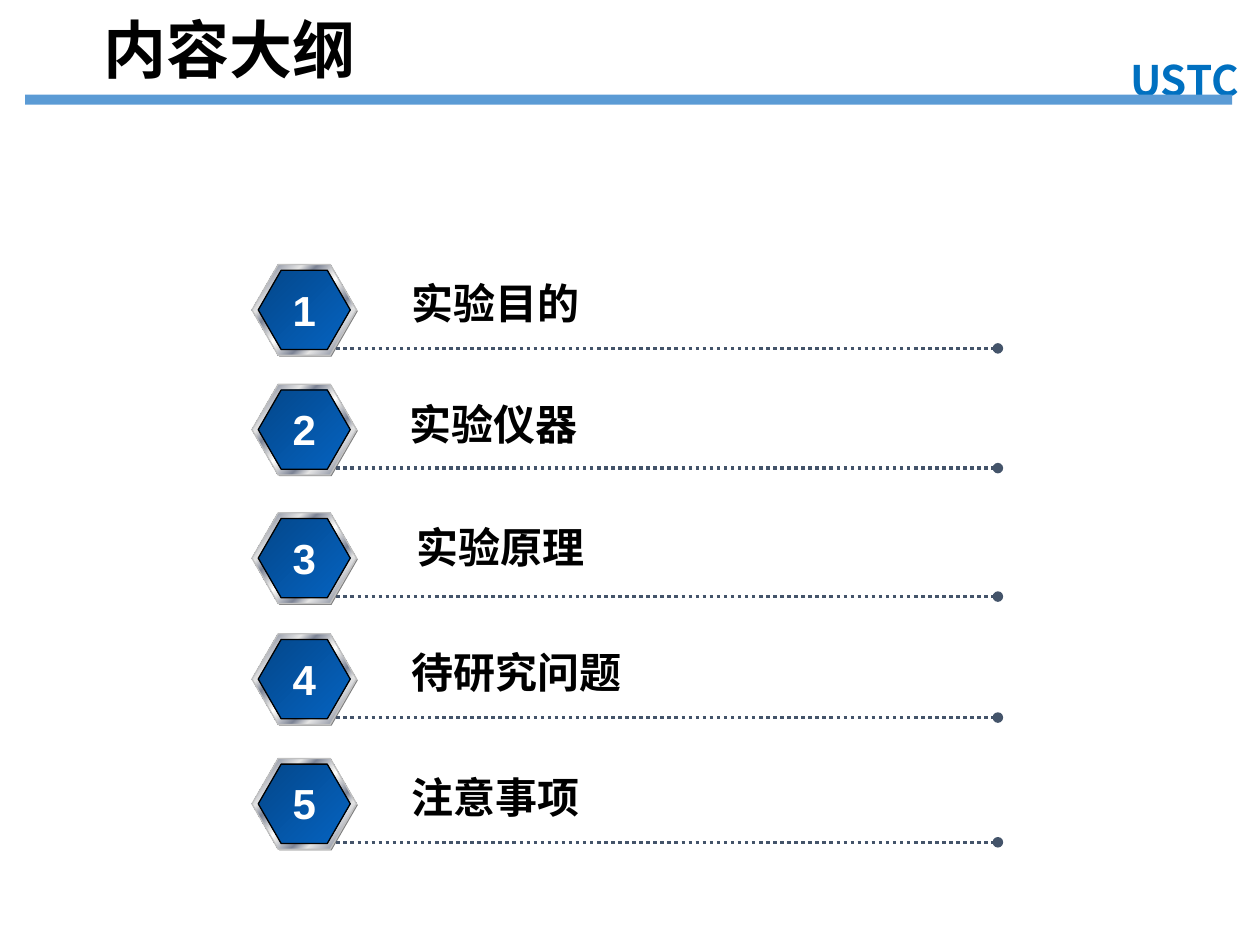
from lxml import etree
from pptx import Presentation
from pptx import util as u
from pptx.dml.color import RGBColor
from pptx.enum import dml, shapes, text
from pptx.oxml.ns import qn

COLORS = {
    "black": "000000", "white": "FFFFFF", "brand": "0070C0", "bar": "5B9BD5",
    "rule": "44546A", "shadow": "808080", "rim": "C0C0C0",
    "steel": "7D8496", "silver": "E6E6E6", "navy": "04478A", "blue": "0563C1",
}
METAL = [(0, "silver"), (8, "steel"), (26, "silver"), (34, "steel"), (46, "silver"),
         (50, "white"), (54, "silver"), (66, "steel"), (74, "silver"),
         (92, "steel"), (100, "silver")]
DEEP_BLUE = [(0, "navy"), (100, "blue")]
CJK, LATIN = "Noto Sans CJK SC", "Arial"
COLUMNS = 100

# Badge top, label text, label column, label row, label width, label font
AGENDA = [
    (21.0, "实验目的", 31.7, 21.5, 16.5, LATIN),
    (30.5, "实验仪器", 31.5, 31.1, 15.6, CJK),
    (40.7, "实验原理", 32.1, 40.9, 15.6, CJK),
    (50.3, "待研究问题", 31.7, 50.8, 18.9, LATIN),
    (60.2, "注意事项", 31.7, 60.7, 15.6, LATIN),
]


def rgb(name):
    return RGBColor.from_string(COLORS[name])


class AgendaSlide:
    """Draws on a grid of square cells, 100 to the slide's width."""

    def __init__(self, presentation):
        self.cell = presentation.slide_width / COLUMNS
        self.slide = presentation.slides.add_slide(presentation.slide_layouts[5])

    def grid(self, *lengths):
        return [u.Emu(round(length * self.cell)) for length in lengths]

    def add_words(self, shape, words, size=24, font=LATIN, color="black",
                  align=text.PP_ALIGN.LEFT, wrap=False):
        frame = shape.text_frame
        frame.word_wrap = wrap
        frame.auto_size = text.MSO_AUTO_SIZE.SHAPE_TO_FIT_TEXT
        frame.vertical_anchor = text.MSO_ANCHOR.TOP
        paragraph = frame.paragraphs[0]
        paragraph.alignment = align
        run = paragraph.add_run()
        run.text = words
        run.font.name, run.font.size, run.font.bold = font, u.Pt(size), True
        run.font.color.rgb = rgb(color)
        east_asian = etree.SubElement(run.font._element, qn("a:ea"))
        east_asian.set("typeface", CJK)
        return run

    def title(self, words, box):
        shape = self.slide.shapes.title
        shape.left, shape.top, shape.width, shape.height = self.grid(*box)
        self.add_words(shape, words, size=36, font=CJK, wrap=True)

    def label(self, words, box, **style):
        return self.add_words(self.slide.shapes.add_textbox(*self.grid(*box)), words, **style)

    def shape(self, kind, box, fill=None, stops=None, line=None):
        shape = self.slide.shapes.add_shape(kind, *self.grid(*box))
        shape.shadow.inherit = False
        if stops:
            self.gradient(shape, stops)
        else:
            shape.fill.solid()
            shape.fill.fore_color.rgb = rgb(fill)
        if line:
            shape.line.color.rgb = rgb(line)
            shape.line.width = u.Pt(0.75)
        else:
            shape.line.fill.background()
        return shape

    def gradient(self, shape, stops):
        """Fill the shape from its top left to its bottom right."""
        shape.fill.gradient()
        fill = shape._element.spPr.find(qn("a:gradFill"))
        for child in list(fill):
            fill.remove(child)
        stop_list = etree.SubElement(fill, qn("a:gsLst"))
        for percent, color in stops:
            stop = etree.SubElement(stop_list, qn("a:gs"), pos=str(percent * 1000))
            etree.SubElement(stop, qn("a:srgbClr"), val=COLORS[color])
        etree.SubElement(fill, qn("a:lin"), ang=str(45 * 60000), scaled="0")

    def hexagon(self, box, **style):
        shape = self.shape(shapes.MSO_SHAPE.HEXAGON, box, **style)
        shape.adjustments[0] = 0.289

    def dotted_rule(self, left, right, row):
        rule = self.slide.shapes.add_connector(
            shapes.MSO_CONNECTOR.STRAIGHT, *self.grid(left, row, right, row))
        rule.line.color.rgb = rgb("rule")
        rule.line.width = u.Pt(2)
        rule.line.dash_style = dml.MSO_LINE.ROUND_DOT
        properties = rule._element.spPr
        etree.SubElement(properties.find(qn("a:ln")), qn("a:tailEnd"), type="oval")
        etree.SubElement(properties, qn("a:effectLst"))

    def badge(self, number, top):
        self.hexagon((20.1, top + 0.1, 8.3, 7.2), fill="shadow")
        self.hexagon((20, top, 8.3, 7.2), stops=METAL, line="rim")
        self.hexagon((20.5, top + 0.45, 7.3, 6.3), stops=DEEP_BLUE, line="black")
        self.dotted_rule(26.7, 79.2, top + 6.65)
        self.label(str(number), (22.2, top + 1.05, 3.9, 5), color="white",
                   align=text.PP_ALIGN.CENTER)

    def header(self):
        run = self.label("USTC", (86, 3.8, 16, 5), font=CJK, color="brand",
                         align=text.PP_ALIGN.CENTER, wrap=True)
        outline = etree.Element(qn("a:ln"), w=str(int(u.Pt(0.75))))
        solid = etree.SubElement(outline, qn("a:solidFill"))
        etree.SubElement(solid, qn("a:srgbClr"), val=COLORS["white"])
        run.font._element.insert(0, outline)
        self.shape(shapes.MSO_SHAPE.RECTANGLE, (2, 7.5, 95.8, 0.8), fill="bar")


def main():
    presentation = Presentation()
    presentation.slide_width, presentation.slide_height = u.Inches(10), u.Inches(7.5)
    agenda = AgendaSlide(presentation)
    agenda.header()
    agenda.title("内容大纲", (7.2, 0.3, 26, 7.1))
    for number, (top, words, column, row, width, font) in enumerate(AGENDA, 1):
        agenda.badge(number, top)
        agenda.label(words, (column, row, width, 5.1), font=font)
    presentation.save("out.pptx")


if __name__ == "__main__":
    main()
